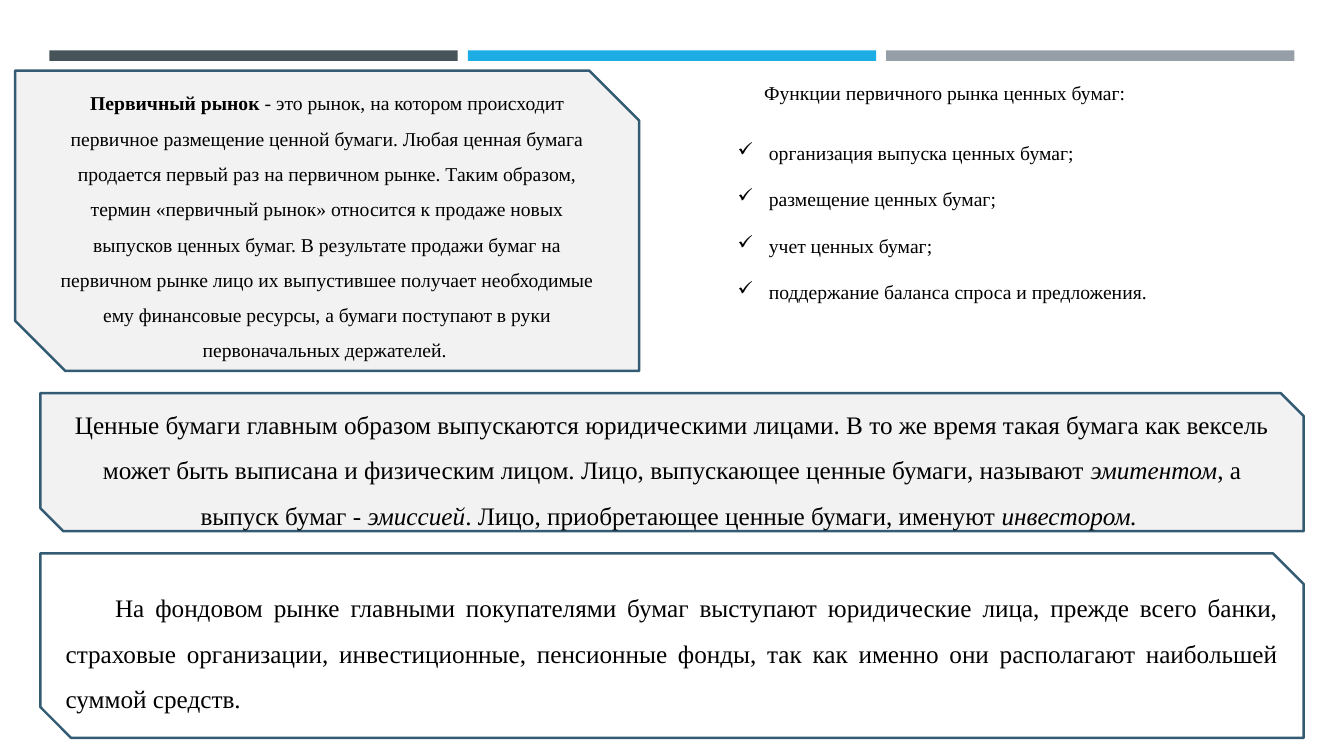
from dataclasses import dataclass

from lxml import etree
from pptx import Presentation
from pptx.dml.color import RGBColor
from pptx.enum.shapes import MSO_SHAPE
from pptx.enum.text import MSO_ANCHOR, PP_ALIGN
from pptx.oxml.ns import qn
from pptx.util import Inches, Pt

RECT, SNIP = MSO_SHAPE.RECTANGLE, MSO_SHAPE.SNIP_2_DIAG_RECTANGLE
CENTER, JUSTIFY = PP_ALIGN.CENTER, PP_ALIGN.JUSTIFY
MIDDLE, TOP = MSO_ANCHOR.MIDDLE, MSO_ANCHOR.TOP


@dataclass(frozen=True)
class Theme:
    face: str = "Times New Roman"
    ink: str = "000000"
    edge: str = "335B74"
    pale: str = "F2F2F2"
    white: str = "FFFFFF"
    bars: tuple = ("465359", "1CADE4", "969FA7")
    small: int = 14
    large: int = 18
    rule: float = 1.75


BOLD, ITALIC = {"bold": True}, {"italic": True}
CENTRED = {"alignment": CENTER, "line_spacing": 1.5}
BODY = {"alignment": JUSTIFY, "line_spacing": 1.5, "space_after": Pt(8)}


class Page:
    """Draws on one slide; boxes are (left, top, width, height) in percent of it."""

    def __init__(self, deck, theme):
        self.theme = theme
        self.size = (deck.slide_width, deck.slide_height) * 2
        self.shapes = deck.slides.add_slide(deck.slide_layouts[6]).shapes

    def place(self, box):
        return [int(side * share / 100) for side, share in zip(self.size, box)]

    def shape(self, kind, box, fill, edge=None):
        item = self.shapes.add_shape(kind, *self.place(box))
        item.shadow.inherit = False
        item.fill.solid()
        item.fill.fore_color.rgb = RGBColor.from_string(fill)
        if edge:
            item.line.color.rgb = RGBColor.from_string(edge)
            item.line.width = Pt(self.theme.rule)
        else:
            item.line.fill.background()
        return item

    def label(self, item, paras, size, form, anchor=TOP, left=0, first=0, mark=None):
        """Fill item with paragraphs, each a list of (text, font style) runs."""
        frame = item.text_frame
        frame.word_wrap = True
        frame.vertical_anchor = anchor
        for n, runs in enumerate(paras):
            para = frame.add_paragraph() if n else frame.paragraphs[0]
            props = para._p.get_or_add_pPr()
            props.set("marL", str(Inches(left)))
            props.set("indent", str(Inches(first)))
            if mark:
                etree.SubElement(props, qn("a:buChar")).set("char", mark)
            for name, value in form.items():
                setattr(para, name, value)
            for text, style in runs:
                run = para.add_run()
                run.text = text
                font = {"name": self.theme.face, "size": Pt(size), **style}
                for name, value in font.items():
                    setattr(run.font, name, value)
                run.font.color.rgb = RGBColor.from_string(self.theme.ink)

    def card(self, box, fill, runs, size, form, first=0):
        item = self.shape(SNIP, box, fill, self.theme.edge)
        self.label(item, [runs], size, form, MIDDLE, first=first)

    def text(self, box, paras, **style):
        item = self.shapes.add_textbox(*self.place(box))
        self.label(item, paras, self.theme.small, BODY, **style)


PRIMARY = [
    ("Первичный рынок ", BOLD),
    ("- это рынок, на котором происходит первичное размещение ценной бумаги. "
     "Любая ценная бумага продается первый раз на первичном рынке. Таким образом, "
     "термин «первичный рынок» относится к продаже новых выпусков ценных бумаг. "
     "В результате продажи бумаг на первичном рынке лицо их выпустившее получает "
     "необходимые ему финансовые ресурсы, а бумаги поступают в руки "
     "первоначальных держателей. ", {}),
]
TASKS = [
    "организация выпуска ценных бумаг; ",
    "размещение ценных бумаг;",
    "учет ценных бумаг; ",
    "поддержание баланса спроса и предложения. ",
]
ISSUERS = [
    ("Ценные бумаги главным образом выпускаются юридическими лицами. В то же время "
     "такая бумага как вексель может быть выписана и физическим лицом. Лицо, "
     "выпускающее ценные бумаги, называют ", {}),
    ("эмитентом", ITALIC),
    (", а выпуск бумаг - ", {}),
    ("эмиссией", ITALIC),
    (". Лицо, приобретающее ценные бумаги, именуют ", {}),
    ("инвестором. ", ITALIC),
]
BUYERS = [
    ("На фондовом рынке главными покупателями бумаг выступают юридические лица, "
     "прежде всего банки, страховые организации, инвестиционные, пенсионные фонды, "
     "так как именно они располагают наибольшей суммой средств. ", {}),
]


def main():
    deck = Presentation()
    deck.slide_width, deck.slide_height = Inches(13.33), Inches(7.5)
    theme = Theme()
    page = Page(deck, theme)

    for n, fill in enumerate(theme.bars):
        page.shape(RECT, (3.68 + 31.13 * n, 6.67, 30.38, 1.37), fill)

    page.card((1.13, 9.33, 46.43, 39.73), theme.pale, PRIMARY, theme.small, CENTRED)
    page.text((52.43, 8.53, 50, 5.6),
              [[("Функции первичного рынка ценных бумаг: ", {})]], first=0.49)
    page.text((54.15, 16.4, 33.9, 24.13), [[(task, {})] for task in TASKS],
              left=0.31, first=-0.31, mark="✓")
    page.card((3, 52, 94, 18.27), theme.pale, ISSUERS, theme.large, CENTRED)
    page.card((3, 73.2, 94, 24.4), theme.white, BUYERS, theme.large, BODY, first=0.49)

    deck.save("out.pptx")


if __name__ == "__main__":
    main()
